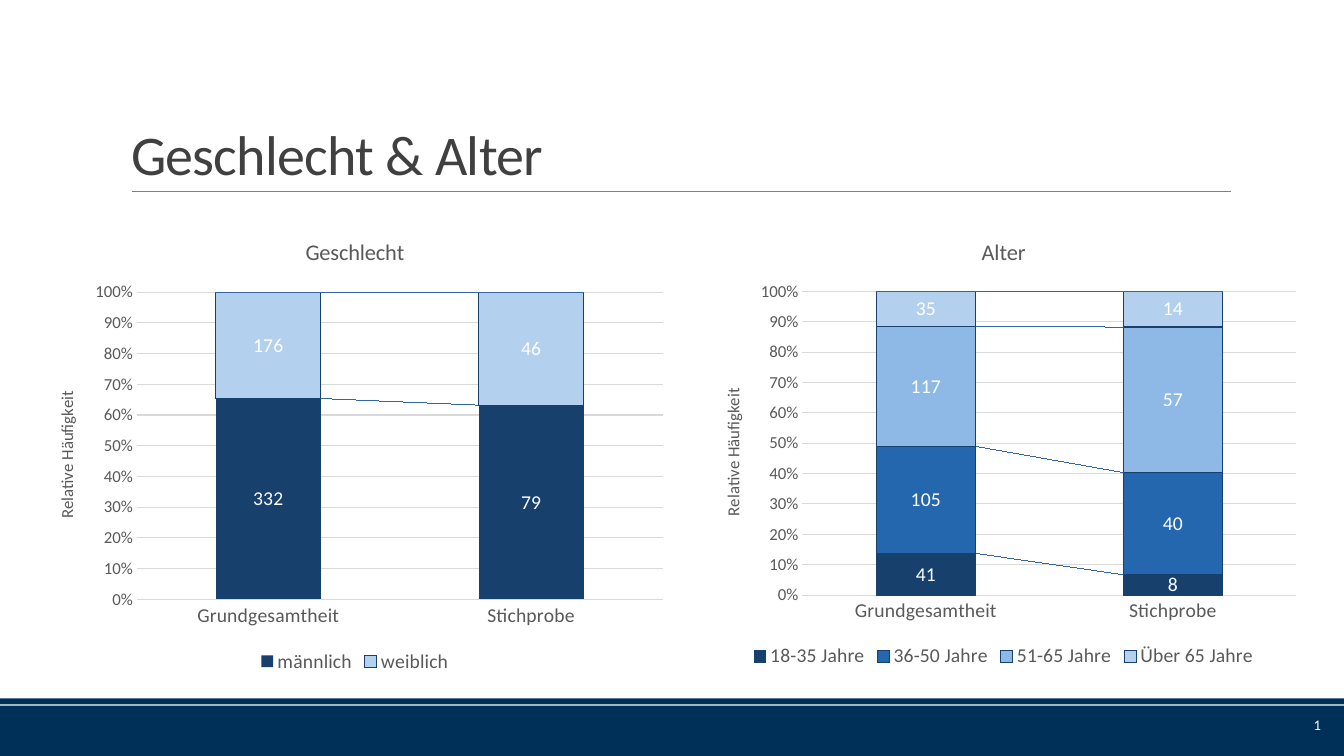
"""Build the slide comparing gender and age in population and sample."""
from lxml import etree
from pptx import Presentation, util as u
from pptx.chart.data import CategoryChartData
from pptx.dml.color import RGBColor
from pptx.enum import chart as ch, shapes, text
from pptx.oxml import parse_xml
from pptx.oxml.ns import nsdecls, qn

COLORS = {"footer": "003058", "rule": "808080", "heading": "404040", "label": "595959",
          "grid": "D9D9D9", "white": "FFFFFF", "navy": "17406D", "blue": "2567AE",
          "sky": "8EB9E7", "pale": "B4D0EF"}


def color(name):
    return RGBColor.from_string(COLORS[name])


def style(font, size, tint):
    for key, value in {"name": "Calibri", "size": u.Pt(size), "bold": False}.items():
        setattr(font, key, value)
    font.color.rgb = color(tint)


prs = Presentation()
prs.slide_width, prs.slide_height = u.Inches(13.33), u.Inches(7.5)
slide = prs.slides.add_slide(prs.slide_layouts[5])

for top, height in ((7, 0.5), (6.93, 0.06)):
    band = slide.shapes.add_shape(shapes.MSO_SHAPE.RECTANGLE, 0, u.Inches(top),
                                  prs.slide_width, u.Inches(height))
    band.shadow.inherit = False
    band.fill.solid()
    band.fill.fore_color.rgb = color("footer")
    band.line.fill.background()

rule = slide.shapes.add_connector(shapes.MSO_CONNECTOR.STRAIGHT, u.Inches(1.31), u.Inches(1.9),
                                  u.Inches(12.21), u.Inches(1.9))
rule.line.color.rgb = color("rule")
rule.line.width = u.Pt(0.5)
etree.SubElement(rule.element.spPr, qn("a:effectLst"))

heading = slide.shapes.title
heading.left, heading.top, heading.width, heading.height = map(u.Inches, (1.2, 0.31, 11, 1.59))
heading.text_frame.text = "Geschlecht & Alter"
heading.text_frame.vertical_anchor = text.MSO_ANCHOR.BOTTOM
heading_line = heading.text_frame.paragraphs[0]
heading_line.alignment = text.PP_ALIGN.LEFT
heading_line.line_spacing = 0.85
style(heading_line.runs[0].font, 40, "heading")
heading_line.runs[0].font._element.set("spc", "-50")

page = slide.shapes.add_textbox(*map(u.Inches, (11.77, 6.99, 1.43, 0.4))).text_frame
page.word_wrap = True
page.vertical_anchor = text.MSO_ANCHOR.MIDDLE
page_line = page.paragraphs[0]
page_line.alignment = text.PP_ALIGN.RIGHT
page_line._p.append(parse_xml(
    f'<a:fld {nsdecls("a")} id="{{B6F15528-21DE-4FAA-801E-634DDDAF4B2B}}" type="slidenum">'
    f'<a:rPr lang="de-DE" sz="1050"><a:solidFill><a:srgbClr val="{COLORS["white"]}"/></a:solidFill>'
    '<a:latin typeface="Calibri"/></a:rPr><a:t>4</a:t></a:fld>'))

charts = [
    ("Geschlecht", (0.34, 2.17, 6.36, 4.55), (0.16, 0.16, 0.82, 0.67),
     [("männlich", (332, 79), "navy"), ("weiblich", (176, 46), "pale")]),
    ("Alter", (6.93, 2.17, 6.05, 4.5), (0.17, 0.16, 0.81, 0.67),
     [("18-35 Jahre", (41, 8), "navy"), ("36-50 Jahre", (105, 40), "blue"),
      ("51-65 Jahre", (117, 57), "sky"), ("Über 65 Jahre", (35, 14), "pale")]),
]
for topic, box, plot_area, groups in charts:
    data = CategoryChartData()
    data.categories = ["Grundgesamtheit", "Stichprobe"]
    for group, counts, tint in groups:
        data.add_series(group, counts)
    chart = slide.shapes.add_chart(ch.XL_CHART_TYPE.COLUMN_STACKED_100,
                                   *map(u.Inches, box), data).chart
    style(chart.font, 10, "label")
    chart.has_title = True
    chart.has_legend = True
    chart.legend.position = ch.XL_LEGEND_POSITION.BOTTOM
    chart.legend.include_in_layout = False
    style(chart.legend.font, 14, "label")

    samples, shares = chart.category_axis, chart.value_axis
    shares.has_title = True
    for owner, caption, size in ((chart.chart_title, topic, 16),
                                 (shares.axis_title, "Relative Häufigkeit", 12)):
        owner.text_frame.text = caption
        style(owner.text_frame.paragraphs[0].runs[0].font, size, "label")
    for axis, size in ((samples, 14), (shares, 12)):
        axis.major_tick_mark = axis.minor_tick_mark = ch.XL_TICK_MARK.NONE
        style(axis.tick_labels.font, size, "label")
    shares.maximum_scale, shares.minimum_scale, shares.major_unit = 1, 0, 0.1
    shares.tick_labels.number_format = "0%"
    shares.tick_labels.number_format_is_linked = False
    shares.format.line.fill.background()
    for line in (samples.format.line, shares.major_gridlines.format.line):
        line.color.rgb = color("grid")
        line.width = u.Pt(0.75)

    plot = chart.plots[0]
    plot.gap_width, plot.overlap, plot.vary_by_categories = 150, 100, False
    for series, (group, counts, tint) in zip(plot.series, groups):
        series.format.fill.solid()
        series.format.fill.fore_color.rgb = color(tint)
        if group == "männlich":
            series.format.line.fill.background()
        else:
            series.format.line.color.rgb = color("navy")
            series.format.line.width = u.Pt(0.75)
        labels = series.data_labels
        labels.show_value = True
        labels.position = ch.XL_LABEL_POSITION.CENTER
        style(labels.font, 14, "white")

    bars = plot._element
    bars.find(qn("c:overlap")).addnext(parse_xml(
        f'<c:serLines {nsdecls("c", "a")}><c:spPr><a:ln w="9525"><a:solidFill>'
        f'<a:srgbClr val="{COLORS["blue"]}"/></a:solidFill></a:ln></c:spPr></c:serLines>'))
    area = bars.getparent()
    for old in area.findall(qn("c:layout")):
        area.remove(old)
    edges = "".join(f'<c:{key} val="{share}"/>' for key, share in zip("xywh", plot_area))
    area.insert(0, parse_xml(
        f'<c:layout {nsdecls("c")}><c:manualLayout><c:layoutTarget val="inner"/>'
        f'<c:xMode val="edge"/><c:yMode val="edge"/>{edges}</c:manualLayout></c:layout>'))

prs.save("out.pptx")
